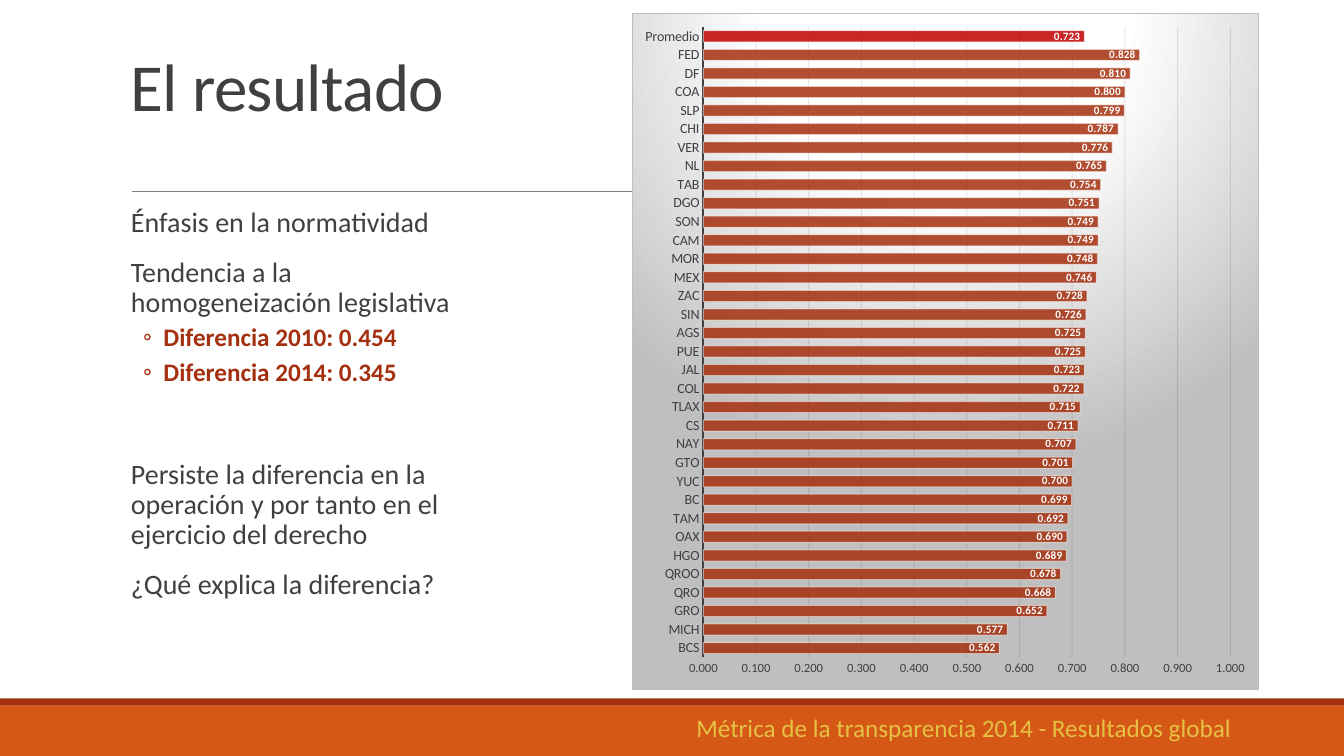
from lxml.etree import SubElement
from pptx import Presentation
from pptx.chart.data import CategoryChartData
from pptx.dml.color import RGBColor
from pptx.enum.chart import XL_CHART_TYPE, XL_LABEL_POSITION, XL_TICK_MARK
from pptx.enum.shapes import MSO_CONNECTOR, MSO_SHAPE
from pptx.enum.text import MSO_ANCHOR
from pptx.oxml import parse_xml
from pptx.oxml.ns import nsdecls, qn
from pptx.util import Cm, Pt

COLORS = {"orange": "D55816", "rust": "A5300F", "red": "C00000", "text": "404040",
          "gold": "E5C243", "rule": "808080", "grid": "0D0D0D", "white": "FFFFFF",
          "silver": "BFBFBF"}

# Scores in thousandths, from the bottom bar to the top one
SCORES = {"BCS": 562, "MICH": 577, "GRO": 652, "QRO": 668, "QROO": 678, "HGO": 689,
          "OAX": 690, "TAM": 692, "BC": 699, "YUC": 700, "GTO": 701, "NAY": 707,
          "CS": 711, "TLAX": 715, "COL": 722, "JAL": 723, "PUE": 725, "AGS": 725,
          "SIN": 726, "ZAC": 728, "MEX": 746, "MOR": 748, "CAM": 749, "SON": 749,
          "DGO": 751, "TAB": 754, "NL": 765, "VER": 776, "CHI": 787, "SLP": 799,
          "COA": 800, "DF": 810, "FED": 828, "Promedio": 723}

# Paragraph styles of the body
POINT = {"space_before": Pt(12), "space_after": Pt(2), "line_spacing": 0.9}
AFTER_GAP = {**POINT, "space_before": Pt(48)}
DETAIL = {"space_before": Pt(2), "space_after": Pt(4), "line_spacing": 0.9}
BODY = [
    ("Énfasis en la normatividad", POINT),
    ("Tendencia a la homogeneización legislativa", POINT),
    ("Diferencia 2010: 0.454", DETAIL),
    ("Diferencia 2014: 0.345", DETAIL),
    ("Persiste la diferencia en la operación y por tanto en el ejercicio del derecho", AFTER_GAP),
    ("¿Qué explica la diferencia?", POINT),
]


def rgb(name):
    return RGBColor.from_string(COLORS[name])


def apply(obj, values):
    for key, value in values.items():
        setattr(obj, key, value)


def set_alpha(colors, percent):
    for color in colors:
        SubElement(color, qn("a:alpha")).set("val", str(percent * 1000))


class Deck:
    font = "Calibri"

    def __init__(self, prs):
        self.s = prs.slides.add_slide(prs.slide_layouts[6])

    def style(self, font, size, color, bold=False):
        apply(font, {"name": self.font, "size": Pt(size), "bold": bold})
        font.color.rgb = rgb(color)

    def stroke(self, line, color, width):
        line.color.rgb = rgb(color)
        line.width = Pt(width)

    def band(self, top, height, color):
        sp = self.s.shapes.add_shape(MSO_SHAPE.RECTANGLE, 0, Cm(top), Cm(33.87), Cm(height))
        sp.shadow.inherit = False
        sp.fill.solid()
        sp.fill.fore_color.rgb = rgb(color)
        sp.line.fill.background()

    def rule(self, left, right, y):
        cx = self.s.shapes.add_connector(MSO_CONNECTOR.STRAIGHT, Cm(left), Cm(y), Cm(right), Cm(y))
        self.stroke(cx.line, "rule", 0.5)
        SubElement(cx.element.spPr, qn("a:effectLst"))

    def box(self, at, **frame):
        tf = self.s.shapes.add_textbox(*map(Cm, at)).text_frame
        apply(tf, {"word_wrap": True, **frame})
        return tf

    def add_text(self, p, text, size, color, bold=False):
        r = p.add_run()
        r.text = text
        self.style(r.font, size, color, bold)
        return r

    def body(self, at, paragraphs):
        tf = self.box(at, margin_left=0, margin_right=0)
        for i, (text, spacing) in enumerate(paragraphs):
            p = tf.add_paragraph() if i else tf.paragraphs[0]
            apply(p, spacing)
            pPr = p._p.get_or_add_pPr()
            if spacing is DETAIL:
                self.add_text(p, text, 18, "rust", True)
                pPr.set("marL", str(Cm(1.07)))
                pPr.set("indent", str(-Cm(0.51)))
                clr = SubElement(pPr, qn("a:buClr"))
                SubElement(clr, qn("a:srgbClr")).set("val", COLORS["rust"])
                SubElement(pPr, qn("a:buFont")).set("typeface", self.font)
                SubElement(pPr, qn("a:buChar")).set("char", "◦")
            else:
                self.add_text(p, text, 20, "text")
                pPr.set("marL", str(Cm(0.25)))

    def bar_chart(self, at, scores):
        data = CategoryChartData(number_format="0.000")
        data.categories = list(scores)
        data.add_series("Series 1", [v / 1000 for v in scores.values()])
        chart = self.s.shapes.add_chart(XL_CHART_TYPE.BAR_CLUSTERED, *map(Cm, at), data).chart
        apply(chart, {"has_legend": False, "has_title": False})
        apply(chart.font, {"name": self.font, "size": Pt(10)})
        self.axes(chart)
        self.bars(chart.plots[0], len(scores) - 1)
        self.backdrop(chart)

    def axes(self, chart):
        cat, val = chart.category_axis, chart.value_axis
        for axis, size in ((cat, 10), (val, 9)):
            apply(axis, {"major_tick_mark": XL_TICK_MARK.NONE, "minor_tick_mark": XL_TICK_MARK.NONE})
            self.style(axis.tick_labels.font, size, "text")
        self.stroke(cat.format.line, "text", 1.5)
        apply(val, {"minimum_scale": 0, "maximum_scale": 1, "major_unit": 0.1,
                    "has_major_gridlines": True})
        apply(val.tick_labels, {"number_format": "0.000", "number_format_is_linked": False})
        val.format.line.fill.background()
        self.stroke(val.major_gridlines.format.line, "grid", 0.75)
        set_alpha(val._element.xpath("c:majorGridlines//a:srgbClr"), 10)

    def bars(self, plot, average):
        apply(plot, {"gap_width": 65, "vary_by_categories": False, "has_data_labels": True})
        series = plot.series[0]
        for item, color in ((series, "rust"), (series.points[average], "red")):
            item.format.fill.solid()
            item.format.fill.fore_color.rgb = rgb(color)
            self.stroke(item.format.line, "white", 0.75)
        set_alpha(series._element.xpath(".//c:spPr/a:solidFill/a:srgbClr"), 85)
        set_alpha(series._element.xpath(".//c:spPr/a:ln//a:srgbClr"), 50)
        labels = plot.data_labels
        apply(labels, {"show_value": True, "position": XL_LABEL_POSITION.INSIDE_END,
                       "number_format": "0.000", "number_format_is_linked": False})
        self.style(labels.font, 8, "white", True)

    def backdrop(self, chart):
        stops = "".join(f'<a:gs pos="{pos * 1000}"><a:srgbClr val="{COLORS[name]}"/></a:gs>'
                        for pos, name in ((0, "white"), (39, "white"), (100, "silver")))
        chart.element.find(qn("c:chart")).addnext(parse_xml(
            f'<c:spPr {nsdecls("c", "a")}><a:gradFill><a:gsLst>{stops}</a:gsLst>'
            '<a:path path="circle"><a:fillToRect l="50000" t="-80000" r="50000" b="180000"/>'
            f'</a:path></a:gradFill><a:ln w="{Pt(0.75)}"><a:solidFill>'
            f'<a:srgbClr val="{COLORS["silver"]}"/></a:solidFill></a:ln></c:spPr>'))
        # Inner plot area as shares of the chart
        area = chart.element.xpath(".//c:plotArea")[0]
        for old in area.findall(qn("c:layout")):
            area.remove(old)
        layout = parse_xml(f'<c:layout {nsdecls("c")}><c:manualLayout/></c:layout>')
        for tag, val in (("layoutTarget", "inner"), ("xMode", "edge"), ("yMode", "edge"),
                         ("x", "0.113"), ("y", "0.02"), ("w", "0.842"), ("h", "0.932")):
            SubElement(layout[0], qn(f"c:{tag}")).set("val", val)
        area.insert(0, layout)


def main():
    prs = Presentation()
    apply(prs, {"slide_width": Cm(33.87), "slide_height": Cm(19.05)})
    deck = Deck(prs)

    # Footer bands and title rule
    deck.band(17.78, 1.27, "orange")
    deck.band(17.6, 0.18, "rust")
    deck.rule(3.33, 31.01, 4.83)

    # Title
    p = deck.box((3.05, 0.79, 27.94, 2.49), vertical_anchor=MSO_ANCHOR.BOTTOM).paragraphs[0]
    p.line_spacing = 0.85
    title = deck.add_text(p, "El resultado", 48, "text")
    title.font._element.set("spc", "-50")

    # Body and chart
    deck.body((3.05, 5.13, 9.19, 11.18), BODY)
    deck.bar_chart((15.93, 0.33, 15.8, 17.07), SCORES)

    # Footer caption
    caption = deck.box((17.3, 17.83, 14.3, 1.02), word_wrap=False)
    deck.add_text(caption.paragraphs[0], "Métrica de la transparencia 2014 - Resultados global", 18, "gold")

    prs.save("out.pptx")


if __name__ == "__main__":
    main()
